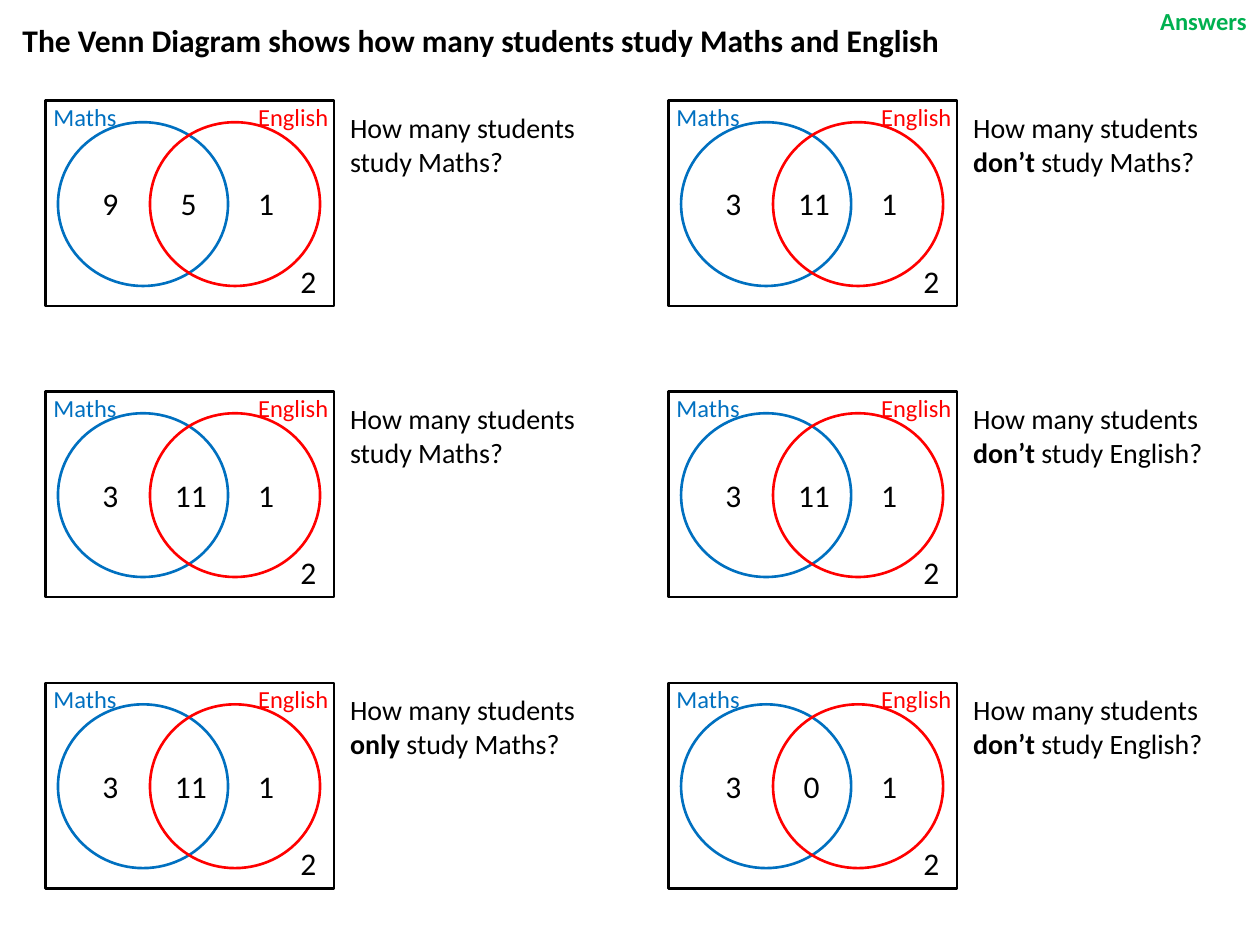
from pptx import Presentation, util as u
from pptx.dml import color
from pptx.enum import shapes, text

COLUMNS, ROWS = 100, 75
WIDTH, HEIGHT = u.Inches(10), u.Inches(7.5)
BLACK, BLUE, RED, GREEN = "000000", "0070C0", "FF0000", "00B050"
PANEL_LEFT, PANEL_TOP = 3.6, 8
PANEL_STEP_X, PANEL_STEP_Y = 49.45, 23.1

PANELS = [
    [(("9", "5", "1", "2"), ("How many students study Maths?",)),
     (("3", "11", "1", "2"), ("How many students ", "don’t", " study Maths?"))],
    [(("3", "11", "1", "2"), ("How many students study Maths?",)),
     (("3", "11", "1", "2"), ("How many students ", "don’t", " study English?"))],
    [(("3", "11", "1", "2"), ("How many students ", "only", " study Maths?")),
     (("3", "0", "1", "2"), ("How many students ", "don’t", " study English?"))],
]


def rgb(value):
    """Return the colour for a hex string."""
    return color.RGBColor.from_string(value)


def grid(left, top, width, height):
    """Turn columns and rows of the slide grid into lengths."""
    across, down = WIDTH / COLUMNS, HEIGHT / ROWS
    return [u.Emu(round(size)) for size in
            (left * across, top * down, width * across, height * down)]


def within(box, left, top, width, height):
    """Place an area relative to the corner of a box."""
    return box[0] + left, box[1] + top, width, height


def add_text(parent, area, spans, size, ink=BLACK, bold=False, wrap=True):
    """Add one paragraph whose every second span switches its weight."""
    box = parent.shapes.add_textbox(*grid(*area))
    frame = box.text_frame
    frame.word_wrap = wrap
    frame.auto_size = text.MSO_AUTO_SIZE.SHAPE_TO_FIT_TEXT
    para = frame.paragraphs[0]
    for index, words in enumerate(spans):
        span = para.add_run()
        span.text = words
        span.font.color.rgb = rgb(ink)
        formats = {"name": "Calibri", "size": u.Pt(size), "bold": bold != (index % 2 == 1)}
        for name, value in formats.items():
            setattr(span.font, name, value)


def add_outline(parent, kind, area, ink):
    """Add an unfilled shape with a coloured outline."""
    shape = parent.shapes.add_shape(kind, *grid(*area))
    shape.shadow.inherit = False
    shape.fill.background()
    shape.line.color.rgb = rgb(ink)
    shape.line.width = u.Pt(1.5)


def add_venn(page, box, counts):
    """Draw a grouped Venn diagram with its four counts and set names."""
    group = page.shapes.add_group_shape()
    add_outline(group, shapes.MSO_SHAPE.RECTANGLE, box, BLACK)
    for left, ink in ((1, BLUE), (8.3, RED)):
        add_outline(group, shapes.MSO_SHAPE.OVAL, within(box, left, 1.7, 13.5, 13), ink)
    middle = 9.3 if len(counts[1]) > 1 else 9.75
    for count, left, top in zip(counts, (3.55, middle, 15.9, 19.25), (6.15, 6.15, 6.15, 12.3)):
        area = within(box, left, top, 2.4 + 1.2 * len(count), 4)
        add_text(group, area, [count], 18)
    for name, left, width, ink in (("English", 15.9, 8, RED), ("Maths", -0.35, 11.2, BLUE)):
        add_text(group, within(box, left, -0.4, width, 3.4), [name], 14, ink)


def add_panel(page, box, counts, question):
    """Place a Venn diagram and its question beside it."""
    add_venn(page, box, counts)
    add_text(page, within(box, 23.2, 0.3, 24.2, 6.4), question, 16)


def add_heading(page, box):
    """Place the title and the answers label."""
    add_text(page, within(box, 0.8, 1.2, 87.8, 4),
             ["The Venn Diagram shows how many students study Maths and English"], 18, bold=True)
    add_text(page, within(box, 91.1, 0, 8.9, 3.4), ["Answers"], 14, GREEN, bold=True, wrap=False)


def main():
    """Build the slide and save the deck."""
    deck = Presentation()
    deck.slide_width, deck.slide_height = WIDTH, HEIGHT
    page = deck.slides.add_slide(deck.slide_layouts[6])
    add_heading(page, (0, 0, COLUMNS, 8))
    for row, panels in enumerate(PANELS):
        for column, (counts, question) in enumerate(panels):
            box = (PANEL_LEFT + column * PANEL_STEP_X,
                   PANEL_TOP + row * PANEL_STEP_Y, 22.9, 16.3)
            add_panel(page, box, counts, question)
    deck.save("out.pptx")


if __name__ == "__main__":
    main()
